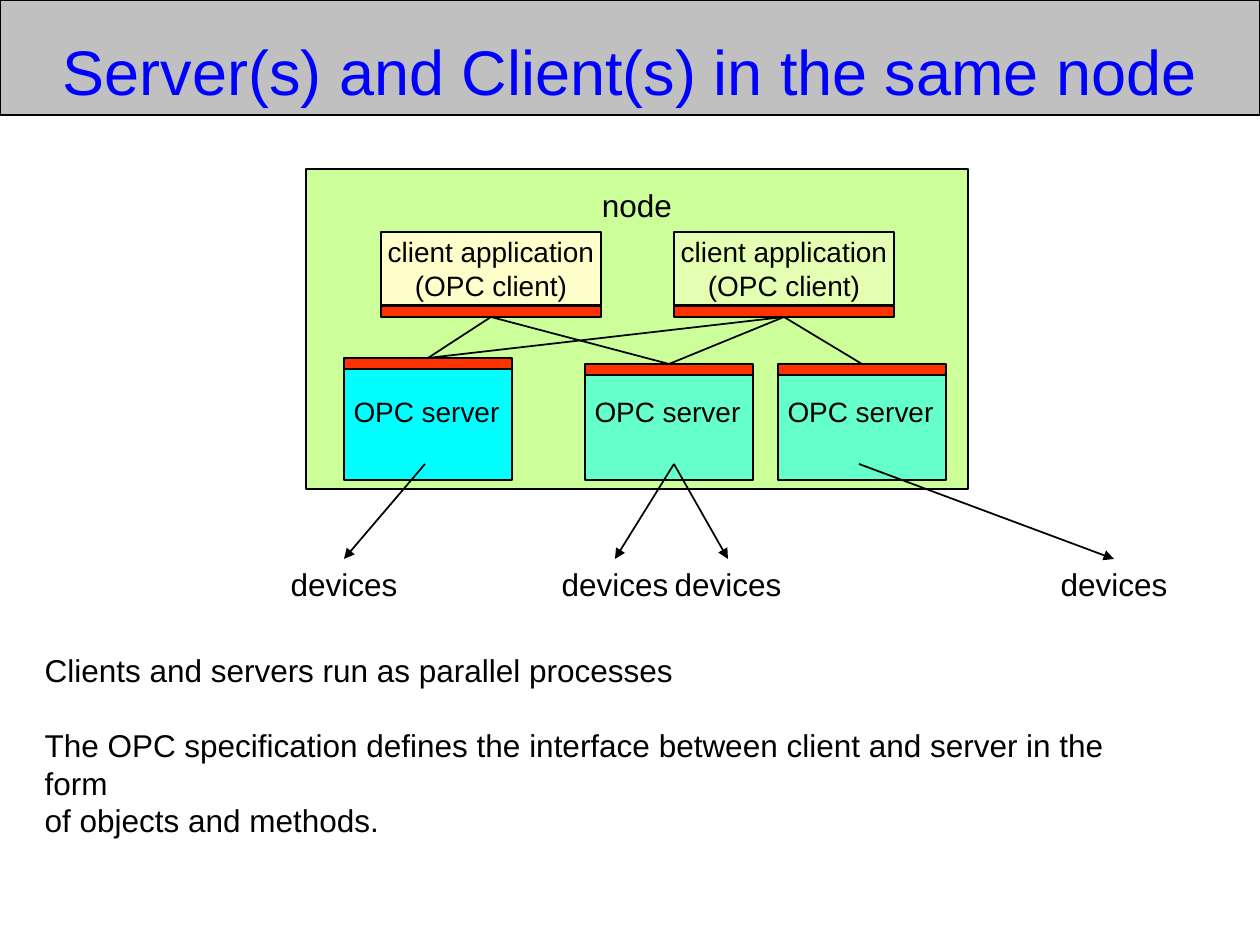
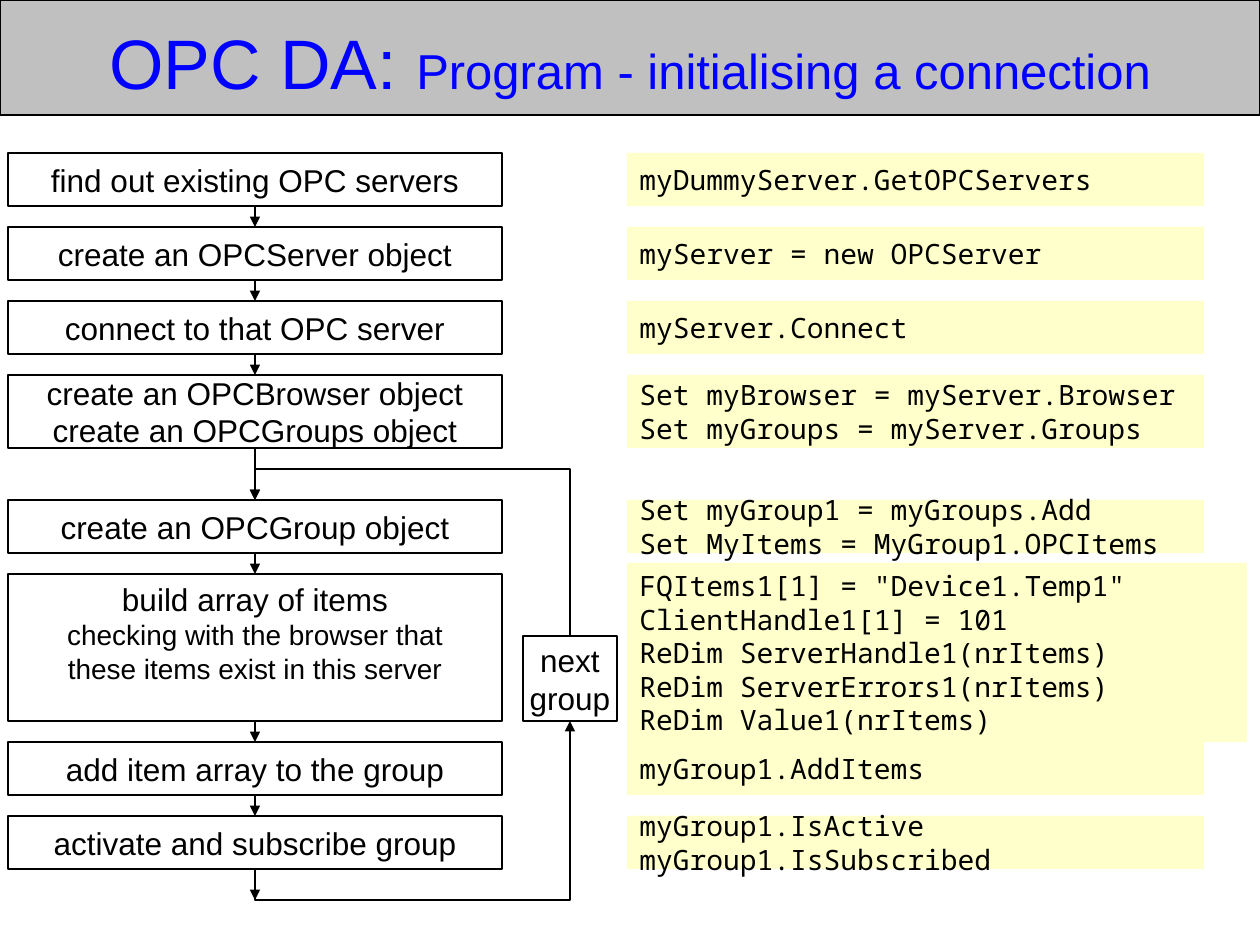
from dataclasses import dataclass
from typing import NamedTuple, Optional

from lxml.etree import SubElement
from pptx import Presentation
from pptx.dml.color import RGBColor
from pptx.enum.shapes import MSO_CONNECTOR, MSO_SHAPE
from pptx.enum.text import MSO_ANCHOR, MSO_AUTO_SIZE, PP_ALIGN
from pptx.oxml.ns import qn
from pptx.util import Emu, Pt

EMU_PER_PX = 914400 / 126


@dataclass(frozen=True)
class Theme:
    black: str = "000000"
    band: str = "C0C0C0"
    title: str = "0000FF"
    node: str = "CCFF99"
    client: str = "FFFFCC"
    server: str = "00FFFF"
    interface: str = "FF3300"
    code: str = "FFFFCC"
    sans: str = "Arial"
    mono: str = "Noto Sans Mono"
    thin: float = 0.75
    line: float = 1
    small: int = 16
    text: int = 18
    subtitle: int = 28
    heading: int = 36
    large_heading: int = 40


THEME = Theme()


class Box(NamedTuple):
    left: int
    top: int
    width: int
    height: int

    @property
    def center(self) -> int:
        return self.left + self.width // 2

    @property
    def bottom(self) -> int:
        return self.top + self.height


class Point(NamedTuple):
    x: float
    y: float


class Client(NamedTuple):
    left: int
    opacity: int
    servers: tuple[int, ...]


class Server(NamedTuple):
    left: int
    interface_top: int
    opacity: int
    outlet: int
    devices: tuple[int, ...]


class Step(NamedTuple):
    lines: tuple[str, ...]
    code: tuple[str, ...]
    height: int = 53
    gap_after: int = 21
    detail: str = ""


CLIENTS = (Client(381, 100, (0, 1)), Client(674, 50, (0, 1, 2)))
SERVERS = (
    Server(344, 358, 100, 425, (344,)),
    Server(585, 364, 50, 674, (615, 728)),
    Server(778, 364, 50, 859, (1114,)),
)
STEPS = (
    Step(("find out existing OPC servers",), ("myDummyServer.GetOPCServers",)),
    Step(("create an OPCServer object",), ("myServer = new OPCServer",)),
    Step(("connect to that OPC server",), ("myServer.Connect",)),
    Step(
        ("create an OPCBrowser object", "create an OPCGroups object"),
        ("Set myBrowser = myServer.Browser", "Set myGroups = myServer.Groups"),
        height=73,
        gap_after=52,
    ),
    Step(
        ("create an OPCGroup object",),
        ("Set myGroup1 = myGroups.Add", "Set MyItems = MyGroup1.OPCItems"),
    ),
    Step(
        ("build array of items",),
        (
            'FQItems1[1] = "Device1.Temp1"',
            "ClientHandle1[1] = 101",
            "ReDim ServerHandle1(nrItems)",
            "ReDim ServerErrors1(nrItems)",
            "ReDim Value1(nrItems)",
        ),
        height=147,
        detail="checking with the browser that these items exist in this server",
    ),
    Step(("add item array to the group",), ("myGroup1.AddItems",)),
    Step(
        ("activate and subscribe group",),
        ("myGroup1.IsActive", "myGroup1.IsSubscribed"),
        gap_after=31,
    ),
)


def px(length: float) -> Emu:
    return Emu(round(length * EMU_PER_PX))


def place(shape, box: Box) -> None:
    shape.left, shape.top, shape.width, shape.height = map(px, box)


def add_run(paragraph, text: str, size: int, color: str = THEME.black,
            font: str = THEME.sans) -> None:
    run = paragraph.add_run()
    run.text = text
    run.font.size = Pt(size)
    run.font.name = font
    run.font.color.rgb = RGBColor.from_string(color)


def write_lines(shape, lines: tuple[str, ...], size: int, font: str = THEME.sans,
                align=PP_ALIGN.CENTER, anchor=MSO_ANCHOR.MIDDLE) -> None:
    frame = shape.text_frame
    frame.word_wrap = False
    frame.vertical_anchor = anchor
    for index, line in enumerate(lines):
        paragraph = frame.add_paragraph() if index else frame.paragraphs[0]
        paragraph.alignment = align
        add_run(paragraph, line, size, font=font)


def draw_box(slide, box: Box, fill: Optional[str] = None,
             line_width: Optional[float] = THEME.line, opacity: int = 100):
    shape = slide.shapes.add_shape(MSO_SHAPE.RECTANGLE, *map(px, box))
    shape.shadow.inherit = False
    if fill is None:
        shape.fill.background()
    else:
        shape.fill.solid()
        shape.fill.fore_color.rgb = RGBColor.from_string(fill)
    if opacity < 100:
        color = shape._element.spPr.find(qn("a:solidFill")).find(qn("a:srgbClr"))
        SubElement(color, qn("a:alpha")).set("val", str(opacity * 1000))
    if line_width is None:
        shape.line.fill.background()
    else:
        shape.line.color.rgb = RGBColor.from_string(THEME.black)
        shape.line.width = Pt(line_width)
    return shape


def draw_label(slide, box: Box, text: str, size: int) -> None:
    label = slide.shapes.add_textbox(*map(px, box))
    write_lines(label, (text,), size, anchor=MSO_ANCHOR.TOP)


def draw_line(slide, start: Point, end: Point, arrow: bool = False,
              kind=MSO_CONNECTOR.STRAIGHT):
    connector = slide.shapes.add_connector(kind, *map(px, start + end))
    connector.line.color.rgb = RGBColor.from_string(THEME.black)
    connector.line.width = Pt(THEME.line)
    if arrow:
        SubElement(connector.line._get_or_add_ln(), qn("a:tailEnd")).set("type", "triangle")
    SubElement(connector._element.spPr, qn("a:effectLst"))
    return connector


def draw_loop(slide, start: Point, end: Point, turn_y: int) -> None:
    """Draw an arrow that leaves vertically, crosses at turn_y and arrives vertically."""
    middle = Point((start.x + end.x) / 2, (start.y + end.y) / 2)
    across, down = start.x - middle.x, start.y - middle.y
    connector = draw_line(
        slide,
        Point(middle.x + down, middle.y - across),
        Point(middle.x - down, middle.y + across),
        arrow=True,
        kind=MSO_CONNECTOR.ELBOW,
    )
    properties = connector._element.spPr
    properties.find(qn("a:xfrm")).set("rot", str(90 * 60000))
    adjustments = properties.find(qn("a:prstGeom")).find(qn("a:avLst"))
    guide = SubElement(adjustments, qn("a:gd"))
    guide.set("name", "adj1")
    guide.set("fmla", f"val {round((start.y - turn_y) / (start.y - end.y) * 100000)}")


def add_titled_slide(presentation, layout: int, title_top: int,
                     title_runs: tuple[tuple[str, int], ...]):
    slide = presentation.slides.add_slide(presentation.slide_layouts[layout])
    band = draw_box(slide, Box(0, 0, 1260, 115), THEME.band, THEME.thin)
    slide.shapes._spTree.insert(2, band._element)
    title = slide.shapes.title
    place(title, Box(0, title_top, 1260, 71))
    title.text_frame.auto_size = MSO_AUTO_SIZE.NONE
    title.text_frame.vertical_anchor = MSO_ANCHOR.MIDDLE
    paragraph = title.text_frame.paragraphs[0]
    paragraph.alignment = PP_ALIGN.CENTER
    for text, size in title_runs:
        add_run(paragraph, text, size, THEME.title)
    return slide


def write_statements(body) -> None:
    place(body, Box(32, 645, 1155, 164))
    statements = (
        ("Clients and servers run as parallel processes", 0),
        ("The OPC specification defines the interface between client and server in the form", 21),
        ("of objects and methods.", 0),
    )
    body.text_frame.auto_size = MSO_AUTO_SIZE.NONE
    write_lines(body, tuple(text for text, _ in statements), THEME.text,
                align=PP_ALIGN.LEFT, anchor=MSO_ANCHOR.TOP)
    for paragraph, (_, space) in zip(body.text_frame.paragraphs, statements):
        properties = paragraph._p.get_or_add_pPr()
        properties.set("marL", "0")
        properties.set("indent", "0")
        SubElement(properties, qn("a:buNone"))
        paragraph.space_before = Pt(space)


def draw_client(slide, client: Client) -> Point:
    """Draw the client and return the point where its links start."""
    body = Box(client.left, 232, 220, 73)
    interface = Box(client.left, 306, 220, 11)
    shape = draw_box(slide, body, THEME.client, THEME.thin, client.opacity)
    write_lines(shape, ("client application", "(OPC client)"), THEME.small)
    draw_box(slide, interface, THEME.interface)
    socket = Point(body.center, interface.bottom)
    draw_line(slide, Point(socket.x - 21, socket.y), Point(socket.x + 21, socket.y))
    return socket


def draw_server(slide, server: Server) -> Point:
    """Draw the server and return the point where its links end."""
    body = Box(server.left, 369, 168, 111)
    draw_box(slide, body, THEME.server, THEME.thin, server.opacity)
    draw_label(slide, Box(server.left - 3, 388, 171, 47), "OPC server", THEME.small)
    draw_box(slide, Box(server.left, server.interface_top, 168, 11), THEME.interface)
    return Point(body.center, server.interface_top)


def build_node_slide(presentation) -> None:
    slide = add_titled_slide(
        presentation, 1, 35, (("Server(s) and Client(s) in the same node", THEME.heading),))
    write_statements(slide.placeholders[1])
    node = Box(306, 169, 662, 320)
    draw_box(slide, node, THEME.node, THEME.thin)
    draw_label(slide, Box(node.center - 48, 180, 96, 50), "node", THEME.text)
    server_sockets = [draw_server(slide, server) for server in SERVERS]
    for client in CLIENTS:
        client_socket = draw_client(slide, client)
        for index in client.servers:
            draw_line(slide, client_socket, server_sockets[index])
    for server in SERVERS:
        for device in server.devices:
            draw_line(slide, Point(server.outlet, 464), Point(device, 559), arrow=True)
            draw_label(slide, Box(device - 66, 559, 132, 50), "devices", THEME.text)


def draw_step(slide, step: Step, box: Box) -> None:
    shape = draw_box(slide, box)
    code_box = Box(627, box.top, 577, box.height)
    if step.detail:
        code_box = Box(627, box.top - 11, 620, box.height + 32)
        label = slide.shapes.add_textbox(*map(px, Box(32, box.top, 446, 118)))
        write_lines(label, step.lines, THEME.text, anchor=MSO_ANCHOR.TOP)
        label.text_frame.word_wrap = True
        paragraph = label.text_frame.paragraphs[0]
        paragraph.add_line_break()
        add_run(paragraph, step.detail, THEME.small)
    else:
        write_lines(shape, step.lines, THEME.text)
    code = draw_box(slide, code_box, THEME.code, line_width=None)
    write_lines(code, step.code, THEME.small, THEME.mono, PP_ALIGN.LEFT)


def build_program_slide(presentation) -> None:
    slide = add_titled_slide(presentation, 5, 26, (
        ("OPC DA: ", THEME.large_heading),
        ("Program - initialising a connection", THEME.subtitle),
    ))
    top = 153
    boxes = []
    for step in STEPS:
        box = Box(8, top, 494, step.height)
        draw_step(slide, step, box)
        top = box.bottom + step.gap_after
        draw_line(slide, Point(box.center, box.bottom), Point(box.center, top), arrow=True)
        boxes.append(box)
    group_step, last_step = boxes[4], boxes[-1]
    next_group = Box(523, 636, 94, 85)
    write_lines(draw_box(slide, next_group), ("next", "group"), THEME.text)
    draw_loop(slide, Point(last_step.center, last_step.bottom),
              Point(next_group.center, next_group.bottom), top)
    draw_loop(slide, Point(next_group.center, next_group.top),
              Point(group_step.center, group_step.top), group_step.top - 31)


def main() -> None:
    presentation = Presentation()
    presentation.slide_width, presentation.slide_height = px(1260), px(945)
    build_node_slide(presentation)
    build_program_slide(presentation)
    presentation.save("out.pptx")


if __name__ == "__main__":
    main()
